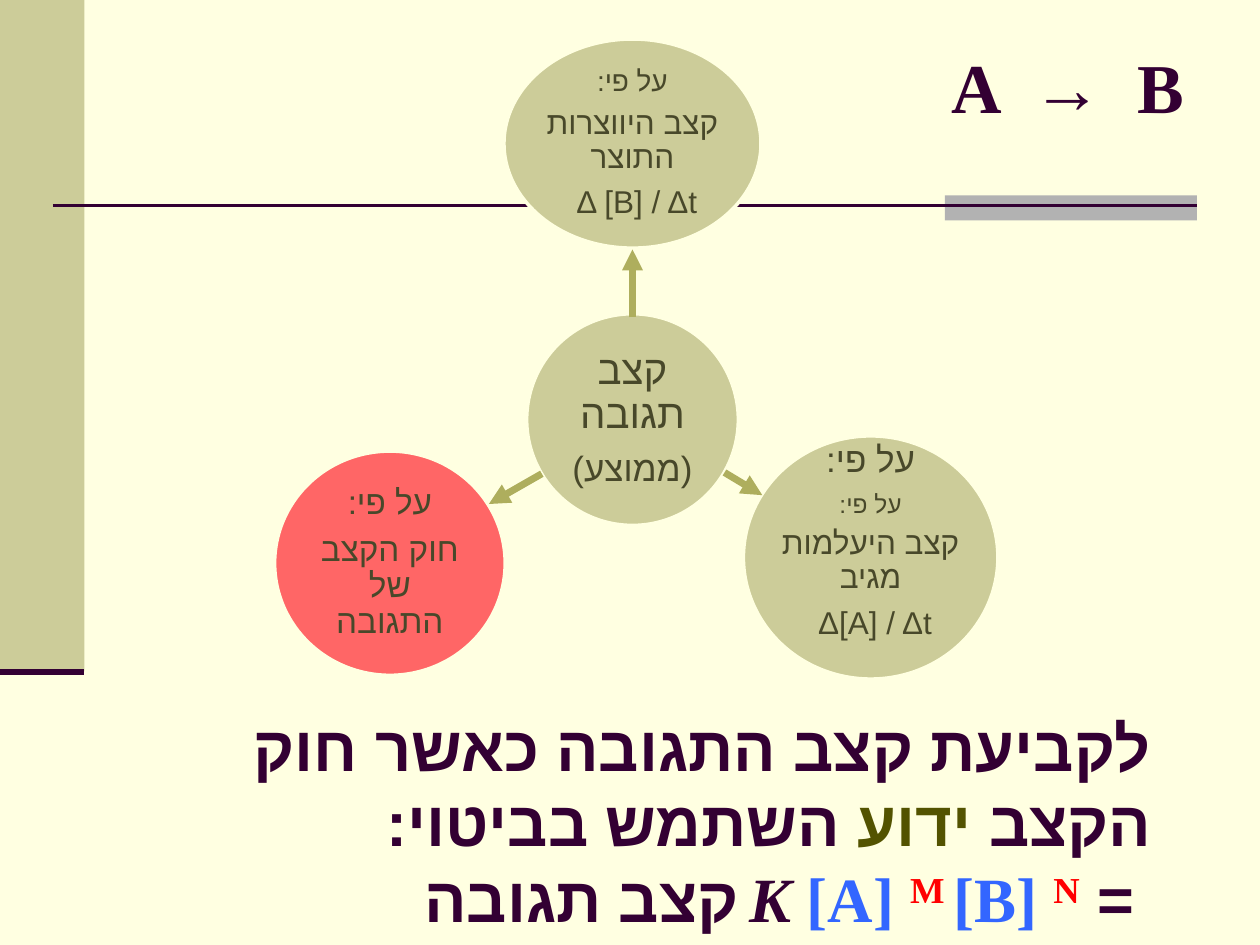
import pptx
import pptx.dml.color
import pptx.enum.shapes
import pptx.enum.text
import pptx.util
from lxml import etree
from pptx.oxml.ns import qn

Inches, Pt = pptx.util.Inches, pptx.util.Pt
RGB = pptx.dml.color.RGBColor.from_string
SHAPE = pptx.enum.shapes.MSO_SHAPE
ALIGN = pptx.enum.text.PP_ALIGN
ANCHOR = pptx.enum.text.MSO_ANCHOR

THEME = dict(
    bg="FFFFE1", dark="330033", olive="CCCC99", gray="B2B2B2", arrow="AEAE5D",
    label="48482A", highlight="FF6666", known="535300", reactant="3366FF",
    order="FF0000", heading="Times New Roman", body="Arial",
    title_size=36, equation_size=40,
)


def format_rtl(p, align, font, size, color, bold=False):
    """Set a paragraph right to left; Hebrew letters always take the body font."""
    p.alignment = align
    p._p.get_or_add_pPr().set("rtl", "1")
    for r in p.runs:
        r.font.name = font
        r.font.size = Pt(size)
        r.font.bold = bold
        r.font.color.rgb = RGB(color)
        cs = etree.SubElement(r._r.get_or_add_rPr(), qn("a:cs"))
        cs.set("typeface", THEME["body"])


def add_line(x1, y1, x2, y2, color, width, arrow=False):
    line = s.shapes.add_connector(
        pptx.enum.shapes.MSO_CONNECTOR.STRAIGHT,
        Inches(x1), Inches(y1), Inches(x2), Inches(y2))
    line.line.color.rgb = RGB(color)
    line.line.width = Pt(width)
    if arrow:
        etree.SubElement(line.line._get_or_add_ln(), qn("a:tailEnd")).set("type", "triangle")
    etree.SubElement(line._element.spPr, qn("a:effectLst"))


prs = pptx.Presentation()
prs.slide_width, prs.slide_height = Inches(10), Inches(7.5)
s = prs.slides.add_slide(prs.slide_layouts[5])
s.background.fill.solid()
s.background.fill.fore_color.rgb = RGB(THEME["bg"])

# Side panel, accent bar and rules
for box, color in [((0, 0, 0.67, 5.33), "olive"), ((7.5, 1.55, 2, 0.2), "gray")]:
    sp = s.shapes.add_shape(SHAPE.RECTANGLE, *map(Inches, box))
    sp.shadow.inherit = False
    sp.fill.solid()
    sp.fill.fore_color.rgb = RGB(THEME[color])
    sp.line.fill.background()
add_line(0.42, 1.63, 9.5, 1.63, THEME["dark"], 1.5)
add_line(0, 5.33, 0.67, 5.33, THEME["dark"], 3.5)

# Title: the rate law
title = s.shapes.title
title.left, title.top, title.width, title.height = map(Inches, (1.01, 5.57, 8.23, 1.49))
tf = title.text_frame
tf.word_wrap = True
tf.auto_size = pptx.enum.text.MSO_AUTO_SIZE.NONE
tf.vertical_anchor = ANCHOR.TOP
p = tf.paragraphs[0]
title_lines = [
    [("לקביעת קצב התגובה כאשר חוק הקצב ", "dark"), ("ידוע ", "known"),
     ("השתמש בביטוי:", "dark")],
    [(" =", "dark"), (" K ", "dark"), ("[A] ", "reactant"), ("M ", "order"),
     ("[B] ", "reactant"), ("N ", "order"), ("קצב תגובה", "dark")],
]
for i, parts in enumerate(title_lines):
    if i:
        p.add_line_break()
    for text, color in parts:
        p.add_run().text = text
format_rtl(p, ALIGN.RIGHT, THEME["heading"], THEME["title_size"], THEME["dark"], True)
for r, (text, color) in zip(p.runs, sum(title_lines, [])):
    r.font.color.rgb = RGB(THEME[color])
    r.font.italic = text == " K "
    if color == "order":
        r._r.get_or_add_rPr().set("baseline", "30000")

# Reaction equation
equation = s.shapes.add_textbox(Inches(1), Inches(0.3), Inches(8.5), Inches(1.25))
equation.text_frame.word_wrap = True
p = equation.text_frame.paragraphs[0]
p.text = "A  →  B"
format_rtl(p, ALIGN.RIGHT, THEME["heading"], THEME["equation_size"], THEME["dark"], True)

# Radial diagram: box, fill, side and bottom insets, lines of text with their sizes
circles = [
    ((4.18, 2.49, 1.68, 1.68), "olive", 0.02, 0.01, [("קצב תגובה", 23), ("(ממוצע)", 20)]),
    ((4, 0.31, 2.04, 1.66), "olive", 0.01, 0.01,
     [("על פי:", 16), ("קצב היווצרות התוצר", 18), ("Δ [B] / Δt ", 18)]),
    ((5.9, 3.46, 2.02, 1.93), "olive", 0.01, 0.26,
     [("על פי:", 20), ("על פי:", 14), ("קצב היעלמות מגיב", 18), ("Δ[A] / Δt ", 18)]),
    ((2.18, 3.58, 1.83, 1.78), "highlight", 0.05, 0.01,
     [("על פי:", 19), ("חוק הקצב של התגובה", 19)]),
]
for box, color, side, bottom, lines in circles:
    sp = s.shapes.add_shape(SHAPE.OVAL, *map(Inches, box))
    sp.shadow.inherit = False
    sp.fill.solid()
    sp.fill.fore_color.rgb = RGB(THEME[color])
    sp.line.color.rgb = RGB(THEME["bg"])
    sp.line.width = Pt(2)
    tf = sp.text_frame
    tf.word_wrap = True
    tf.vertical_anchor = ANCHOR.MIDDLE
    tf.margin_left = tf.margin_right = Inches(side)
    tf.margin_top, tf.margin_bottom = Inches(0.01), Inches(bottom)
    tf.text = "\n".join(text for text, size in lines)
    for p, (text, size) in zip(tf.paragraphs, lines):
        format_rtl(p, ALIGN.CENTER, THEME["body"], size, THEME["label"])
        p.line_spacing = 0.9
        p.space_after = Pt(round(0.35 * size, 1))

# Arrows from the hub to the three ways of finding the rate
for ends in [(5.02, 2.52, 5.02, 1.98), (5.75, 3.75, 6.05, 3.93), (4.3, 3.76, 3.88, 4)]:
    add_line(*ends, THEME["arrow"], 4, arrow=True)

prs.save("out.pptx")
